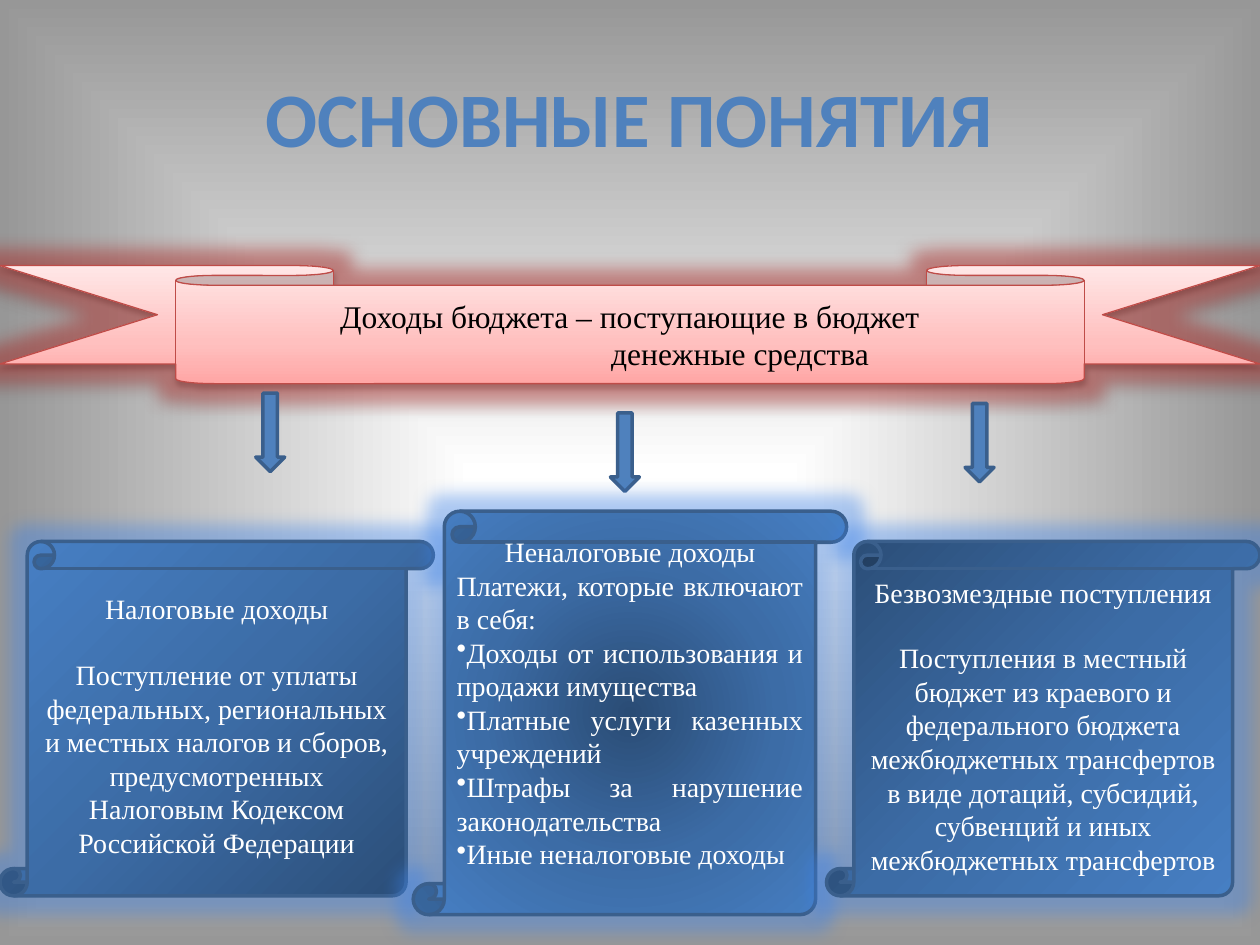
from pptx import Presentation
from pptx.dml.color import RGBColor
from pptx.enum.shapes import MSO_SHAPE
from pptx.enum.text import MSO_ANCHOR, PP_ALIGN
from pptx.oxml import parse_xml
from pptx.oxml.ns import nsdecls, qn
from pptx.util import Inches, Pt

RIBBON, ARROW, SCROLL = MSO_SHAPE.DOWN_RIBBON, MSO_SHAPE.DOWN_ARROW, MSO_SHAPE.VERTICAL_SCROLL
CENTER, JUSTIFY = PP_ALIGN.CENTER, PP_ALIGN.JUSTIFY
MIDDLE = MSO_ANCHOR.MIDDLE
TITLE_ONLY = 5

BLUE, EDGE, RED = "4F81BD", "3A5F8C", "BF4C48"
SERIF, SANS = "Times New Roman", "Calibri"
PINKS = [(0, "FFA6A5"), (35, "FFC0BF"), (100, "FFE7E7")]
BLUES = [(0, "2A4C75"), (50, "3C6CA6"), (100, "4780C5")]
GREYS = [(0, "FFFFFF"), (100, "979797")]


def rgb(value):
    return RGBColor.from_string(value)


def angle(degrees):
    return f'<a:lin ang="{degrees * 60000}" scaled="0"/>'


def spread(kind, l, t, r, b):
    return (f'<a:path path="{kind}"><a:fillToRect l="{l}000" t="{t}000" '
            f'r="{r}000" b="{b}000"/></a:path>')


def para(text, align=CENTER, bullet=False, **fmt):
    return text, bullet, {"alignment": align, **fmt}


class Deck:
    def __init__(self, width, height):
        self.prs = Presentation()
        self.prs.slide_width, self.prs.slide_height = Inches(width), Inches(height)
        self.s = None

    def slide(self, stops, direction):
        self.s = self.prs.slides.add_slide(self.prs.slide_layouts[TITLE_ONLY])
        self.gradient(self.s.background.fill, self.s.element, stops, direction)

    def box(self, x, y, w, h):
        W, H = self.prs.slide_width, self.prs.slide_height
        return int(x * W), int(y * H), int(w * W), int(h * H)

    def gradient(self, fill, owner, stops, direction):
        fill.gradient()
        old = owner.find(".//" + qn("a:gradFill"))
        marks = "".join(f'<a:gs pos="{pos * 1000}"><a:srgbClr val="{color}"/></a:gs>'
                        for pos, color in stops)
        new = parse_xml(f'<a:gradFill {nsdecls("a")} rotWithShape="1">'
                        f'<a:gsLst>{marks}</a:gsLst>{direction}</a:gradFill>')
        old.getparent().replace(old, new)

    def effect(self, sp, tag, color, alpha, **attrs):
        pairs = " ".join(f'{k}="{v}"' for k, v in attrs.items())
        sp.element.spPr.find(qn("a:effectLst")).append(parse_xml(
            f'<a:{tag} {nsdecls("a")} {pairs}><a:srgbClr val="{color}">'
            f'<a:alpha val="{alpha}000"/></a:srgbClr></a:{tag}>'))

    def text(self, sp, paras, size, font, color, bold=False):
        tf = sp.text_frame
        tf.word_wrap, tf.vertical_anchor = True, MIDDLE
        for i, (text, bullet, fmt) in enumerate(paras):
            p = tf.paragraphs[0] if i == 0 else tf.add_paragraph()
            for name, value in fmt.items():
                if name == "left":
                    p._p.get_or_add_pPr().set("marL", str(value))
                else:
                    setattr(p, name, value)
            if bullet:
                p._p.get_or_add_pPr().append(
                    parse_xml(f'<a:buChar {nsdecls("a")} char="•"/>'))
            r = p.add_run()
            r.text = text
            style = {"size": Pt(size), "name": font, "bold": bold}
            for name, value in style.items():
                setattr(r.font, name, value)
            r.font.color.rgb = rgb(color)

    def title(self, text, *place):
        sp = self.s.shapes.title
        sp.left, sp.top, sp.width, sp.height = self.box(*place)
        self.text(sp, [para(text)], 44, SANS, BLUE, bold=True)

    def shape(self, kind, place, line, width, adj=()):
        sp = self.s.shapes.add_shape(kind, *self.box(*place))
        sp.shadow.inherit = False
        sp.line.color.rgb, sp.line.width = rgb(line), Pt(width)
        for i, value in enumerate(adj):
            sp.adjustments[i] = value
        return sp

    def ribbon(self, place, paras):
        sp = self.shape(RIBBON, place, RED, 0.75, (0.167, 0.721))
        self.gradient(sp.fill, sp.element, PINKS, angle(270))
        self.effect(sp, "glow", "C92F2B", 40, rad=Pt(18))
        self.effect(sp, "outerShdw", "000000", 38, blurRad=Pt(3.1),
                    dist=Pt(1.6), dir=90 * 60000, rotWithShape=0)
        self.text(sp, paras, 18, SERIF, "000000")

    def arrow(self, *place):
        sp = self.shape(ARROW, place, EDGE, 2)
        sp.fill.solid()
        sp.fill.fore_color.rgb = rgb(BLUE)

    def scroll(self, place, direction, paras, bottom=0.05):
        sp = self.shape(SCROLL, place, EDGE, 2, (0.077,))
        self.gradient(sp.fill, sp.element, BLUES, direction)
        self.effect(sp, "glow", "3C82E8", 40, rad=Pt(18))
        sp.text_frame.margin_bottom = Inches(bottom)
        self.text(sp, paras, 16, SERIF, "FFFFFF")


def main():
    deck = Deck(10, 7.5)
    deck.slide(GREYS, spread("rect", 50, 50, 50, 50))
    deck.title("ОСНОВНЫЕ ПОНЯТИЯ", 0.05, 0.04, 0.9, 0.167)
    deck.ribbon((0, 0.281, 1, 0.125), [
        para("Доходы бюджета – поступающие в бюджет"),
        para("денежные средства", left=Inches(1.75))])

    for i, y in enumerate((0.416, 0.437, 0.427)):
        deck.arrow(0.203 + 0.2815 * i, y, 0.023, 0.083)

    gap = Pt(18.4)
    sources = ("Доходы от использования и продажи имущества",
               "Платные услуги казенных учреждений",
               "Штрафы за нарушение законодательства",
               "Иные неналоговые доходы")
    scrolls = [
        (0.573, 0.375, spread("circle", 100, 100, 0, 0), 0.05, [
            para("Налоговые доходы"),
            para("Поступление от уплаты федеральных, региональных и местных налогов "
                 "и сборов, предусмотренных Налоговым Кодексом Российской Федерации",
                 space_before=gap)]),
        (0.541, 0.427, spread("circle", 50, 50, 50, 50), 0.34, [
            para("Неналоговые доходы"),
            para("Платежи, которые включают в себя:", JUSTIFY),
            *(para(source, JUSTIFY, True) for source in sources)]),
        (0.573, 0.375, angle(45), 0.05, [
            para("Безвозмездные поступления"),
            para("Поступления в местный бюджет из краевого и федерального бюджета "
                 "межбюджетных трансфертов в виде дотаций, субсидий, субвенций и иных "
                 "межбюджетных трансфертов", space_before=gap)]),
    ]
    for i, (y, h, direction, bottom, paras) in enumerate(scrolls):
        deck.scroll((0.328 * i, y, 0.344, h), direction, paras, bottom)

    deck.prs.save("out.pptx")


if __name__ == "__main__":
    main()
